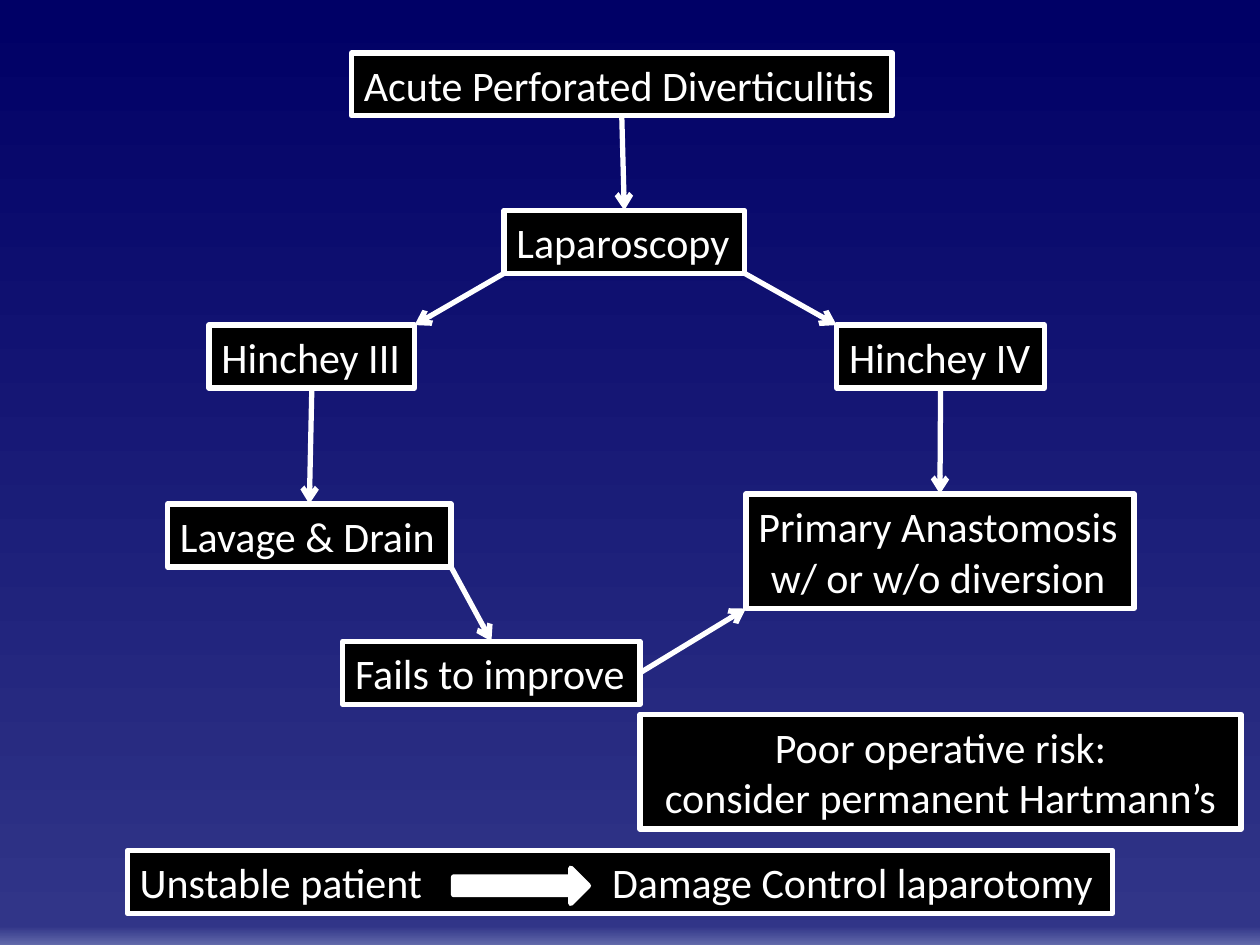
import copy

import pptx
import pptx.dml.color
import pptx.enum.shapes
import pptx.enum.text
import pptx.oxml
import pptx.oxml.ns
import pptx.util
from pptx.util import Inches

COLORS = {"box": "000000", "ink": "FFFFFF",
          "top": "000066", "low": "313588", "bottom": "6169AA"}
FONT = {"name": "Calibri", "size": pptx.util.Pt(24)}
LINE_WIDTH = pptx.util.Pt(3)
ROW = 0.5
DOUBLE_ROW = 0.91
LEFT = pptx.enum.text.PP_ALIGN.LEFT
CENTER = pptx.enum.text.PP_ALIGN.CENTER

# Name: (left, top, width, height), then (line, alignment) pairs
STEPS = {
    "diagnosis": ((1.78, 0, 4.29, ROW), [("Acute Perforated Diverticulitis", LEFT)]),
    "laparoscopy": ((2.99, 1.25, 1.91, ROW), [("Laparoscopy", LEFT)]),
    "hinchey 3": ((0.65, 2.16, 1.63, ROW), [("Hinchey III", LEFT)]),
    "hinchey 4": ((5.63, 2.16, 1.65, ROW), [("Hinchey IV", LEFT)]),
    "lavage": ((0.32, 3.58, 2.25, ROW), [("Lavage & Drain", LEFT)]),
    "anastomosis": ((4.91, 3.5, 3.08, DOUBLE_ROW),
                    [("Primary Anastomosis", LEFT), ("w/ or w/o diversion", CENTER)]),
    "failure": ((1.71, 4.67, 2.36, ROW), [("Fails to improve", LEFT)]),
    "poor risk": ((4.07, 5.25, 4.77, DOUBLE_ROW),
                  [("Poor operative risk:", CENTER),
                   ("consider permanent Hartmann’s", CENTER)]),
}

# Anchors as fractions of a step's width and height
TOP, BOTTOM, RIGHT = (0.5, 0), (0.5, 1), (1, 0.5)
TOP_LEFT, TOP_RIGHT = (0, 0), (1, 0)
BOTTOM_LEFT, BOTTOM_RIGHT = (0, 1), (1, 1)
ARROWS = [
    ("diagnosis", BOTTOM, "laparoscopy", TOP),
    ("laparoscopy", BOTTOM_LEFT, "hinchey 3", TOP_RIGHT),
    ("laparoscopy", BOTTOM_RIGHT, "hinchey 4", TOP_LEFT),
    ("hinchey 3", BOTTOM, "lavage", TOP),
    ("hinchey 4", BOTTOM, "anastomosis", TOP),
    ("lavage", BOTTOM_RIGHT, "failure", TOP),
    ("failure", RIGHT, "anastomosis", BOTTOM_LEFT),
]


def color(name):
    return pptx.dml.color.RGBColor.from_string(COLORS[name])


def paint_background(page):
    fill = page.background.fill
    fill.gradient()
    fill.gradient_angle = 270
    stop_list = page.element.find(".//" + pptx.oxml.ns.qn("a:gsLst"))
    stop_list.append(copy.deepcopy(stop_list[-1]))
    stops = [("top", 0.01), ("low", 0.98), ("bottom", 1)]
    for stop, (name, position) in zip(fill.gradient_stops, stops):
        stop.color.rgb = color(name)
        stop.position = position


def add_outlined(page, kind, box, fill):
    shape = page.shapes.add_shape(kind, *map(Inches, box))
    shape.shadow.inherit = False
    shape.fill.solid()
    shape.fill.fore_color.rgb = color(fill)
    shape.line.color.rgb = color("ink")
    shape.line.width = LINE_WIDTH
    return shape


def add_step(page, box, lines, wrap=False):
    shape = add_outlined(page, pptx.enum.shapes.MSO_SHAPE.RECTANGLE, box, "box")
    frame = shape.text_frame
    frame.word_wrap = wrap
    frame.auto_size = pptx.enum.text.MSO_AUTO_SIZE.SHAPE_TO_FIT_TEXT
    for index, (text, alignment) in enumerate(lines):
        para = frame.add_paragraph() if index else frame.paragraphs[0]
        para.alignment = alignment
        span = para.add_run()
        span.text = text
        for key, value in FONT.items():
            setattr(span.font, key, value)
        span.font.color.rgb = color("ink")
    return shape


def add_arrow(page, start, end):
    line = page.shapes.add_connector(
        pptx.enum.shapes.MSO_CONNECTOR.STRAIGHT, *map(int, start + end))
    line.line.color.rgb = color("ink")
    line.line.width = LINE_WIDTH
    # Arrowhead, and no shadow
    head = pptx.oxml.parse_xml(
        f'<a:tailEnd {pptx.oxml.ns.nsdecls("a")} type="arrow"/>')
    line.line._get_or_add_ln().append(head)
    line._element.spPr.append(
        pptx.oxml.parse_xml(f'<a:effectLst {pptx.oxml.ns.nsdecls("a")}/>'))


def anchor(shape, side):
    return (shape.left + shape.width * side[0], shape.top + shape.height * side[1])


def add_flowchart(page, left, top):
    shapes = {}
    for name, ((x, y, width, height), lines) in STEPS.items():
        shapes[name] = add_step(page, (left + x, top + y, width, height), lines)
    for source, start, target, end in ARROWS:
        add_arrow(page, anchor(shapes[source], start), anchor(shapes[target], end))


def add_unstable_bar(page, left, top, width, height):
    text = "Unstable patient\tDamage Control laparotomy"
    bar = add_step(page, (left, top, width, height), [(text, LEFT)], wrap=True)
    # A tab stop leaves room for the block arrow
    tabs = pptx.oxml.parse_xml(
        f'<a:tabLst {pptx.oxml.ns.nsdecls("a")}>'
        f'<a:tab pos="{Inches(3.75)}" algn="l"/></a:tabLst>')
    bar.text_frame.paragraphs[0]._p.get_or_add_pPr().append(tabs)
    add_outlined(page, pptx.enum.shapes.MSO_SHAPE.RIGHT_ARROW,
                 (left + 2.59, top + 0.14, 1.07, 0.28), "ink")


def main():
    deck = pptx.Presentation()
    deck.slide_width, deck.slide_height = Inches(10), Inches(7.5)
    page = deck.slides.add_slide(deck.slide_layouts[6])
    paint_background(page)
    add_flowchart(page, 1.01, 0.42)
    add_unstable_bar(page, 1.01, 6.75, 7.82, ROW)
    deck.save("out.pptx")


if __name__ == "__main__":
    main()
